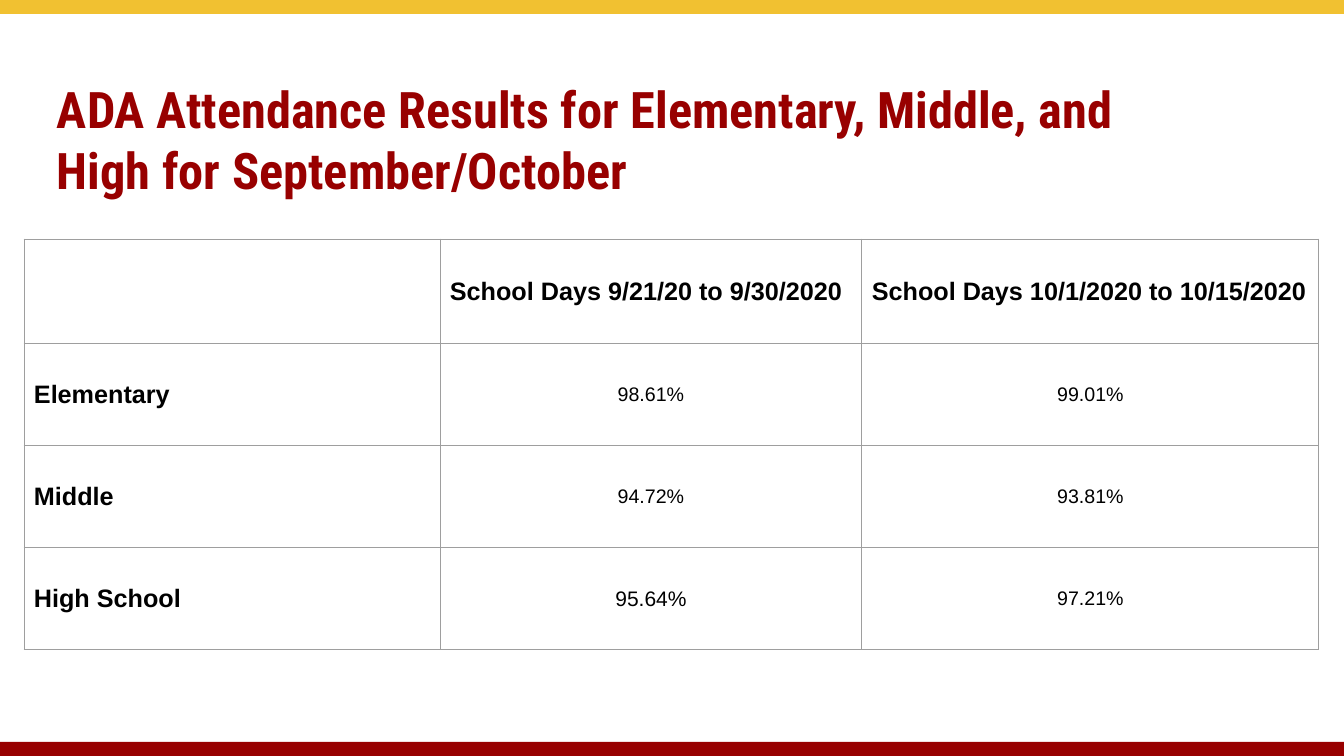
from lxml import etree
from pptx import Presentation, util as u
from pptx.dml.color import RGBColor
from pptx.enum import shapes, text
from pptx.oxml.ns import qn

EMU_PER_PX = 914400 / 100.8
SLIDE_WIDTH, SLIDE_HEIGHT = 1344, 756
BAR_HEIGHT = 14

GOLD = RGBColor(0xF1, 0xC1, 0x31)
CRIMSON = RGBColor(0x98, 0x00, 0x00)
GRAY = RGBColor(0x9E, 0x9E, 0x9E)
BLACK = RGBColor(0x00, 0x00, 0x00)

TITLE = "ADA Attendance Results for Elementary, Middle, and High for September/October"
COLUMN_WIDTHS = [416, 422, 457]
ROW_HEIGHTS = [105, 102, 102, 102]
ATTENDANCE = [
    ["", "School Days 9/21/20 to 9/30/2020", "School Days 10/1/2020 to 10/15/2020"],
    ["Elementary", "98.61%", "99.01%"],
    ["Middle", "94.72%", "93.81%"],
    ["High School", "95.64%", "97.21%"],
]
LARGER_VALUE = (3, 1)  # this one value is set a point larger


def px(length):
    return u.Emu(round(length * EMU_PER_PX))


def write_text(frame, words, size=18, font="Arial", color=BLACK, bold=False,
               align=text.PP_ALIGN.LEFT):
    paragraph = frame.paragraphs[0]
    paragraph.alignment = align
    paragraph.font.size = u.Pt(size)
    if words:
        run = paragraph.add_run()
        run.text = words
        run.font.size = u.Pt(size)
        run.font.name = font
        run.font.bold = bold
        run.font.color.rgb = color


def add_bar(slide, top, color):
    bar = slide.shapes.add_shape(shapes.MSO_SHAPE.RECTANGLE, 0, px(top),
                                 px(SLIDE_WIDTH), px(BAR_HEIGHT))
    bar.shadow.inherit = False
    bar.fill.solid()
    bar.fill.fore_color.rgb = color
    bar.line.fill.background()


def set_title(slide):
    title = slide.shapes.title
    title.left, title.top, title.width, title.height = map(px, (57, 74, 1127, 130))
    frame = title.text_frame
    frame.margin_left = frame.margin_right = frame.margin_top = frame.margin_bottom = 0
    frame.word_wrap = True
    frame.auto_size = text.MSO_AUTO_SIZE.NONE
    frame.vertical_anchor = text.MSO_ANCHOR.MIDDLE
    write_text(frame, TITLE, size=36, font="Roboto Condensed", color=CRIMSON, bold=True)


def add_borders(cell):
    properties = cell._tc.get_or_add_tcPr()
    for position, side in enumerate(("a:lnL", "a:lnR", "a:lnT", "a:lnB")):
        line = etree.Element(qn(side), w=str(u.Pt(0.75)))
        fill = etree.SubElement(line, qn("a:solidFill"))
        etree.SubElement(fill, qn("a:srgbClr"), val=str(GRAY))
        properties.insert(position, line)


def add_attendance_table(slide):
    frame = slide.shapes.add_table(len(ROW_HEIGHTS), len(COLUMN_WIDTHS), px(24), px(239),
                                   px(sum(COLUMN_WIDTHS)), px(sum(ROW_HEIGHTS)))
    table = frame.table
    table.first_row = table.horz_banding = False
    for column, width in zip(table.columns, COLUMN_WIDTHS):
        column.width = px(width)
    for row, height in zip(table.rows, ROW_HEIGHTS):
        row.height = px(height)

    for row_index, row in enumerate(ATTENDANCE):
        for column_index, words in enumerate(row):
            cell = table.cell(row_index, column_index)
            cell.fill.background()
            cell.margin_left = cell.margin_right = px(10)
            cell.margin_top = cell.margin_bottom = px(10)
            cell.vertical_anchor = text.MSO_ANCHOR.MIDDLE
            add_borders(cell)
            if row_index == 0 or column_index == 0:
                write_text(cell.text_frame, words, bold=True)
            else:
                size = 15 if (row_index, column_index) == LARGER_VALUE else 14
                write_text(cell.text_frame, words, size=size, align=text.PP_ALIGN.CENTER)


def main():
    presentation = Presentation()
    presentation.slide_width = px(SLIDE_WIDTH)
    presentation.slide_height = px(SLIDE_HEIGHT)
    slide = presentation.slides.add_slide(presentation.slide_layouts[5])

    # Bars along the top and bottom edges
    add_bar(slide, 0, GOLD)
    add_bar(slide, SLIDE_HEIGHT - BAR_HEIGHT, CRIMSON)

    # Title and attendance results
    set_title(slide)
    add_attendance_table(slide)
    presentation.save("out.pptx")


if __name__ == "__main__":
    main()
